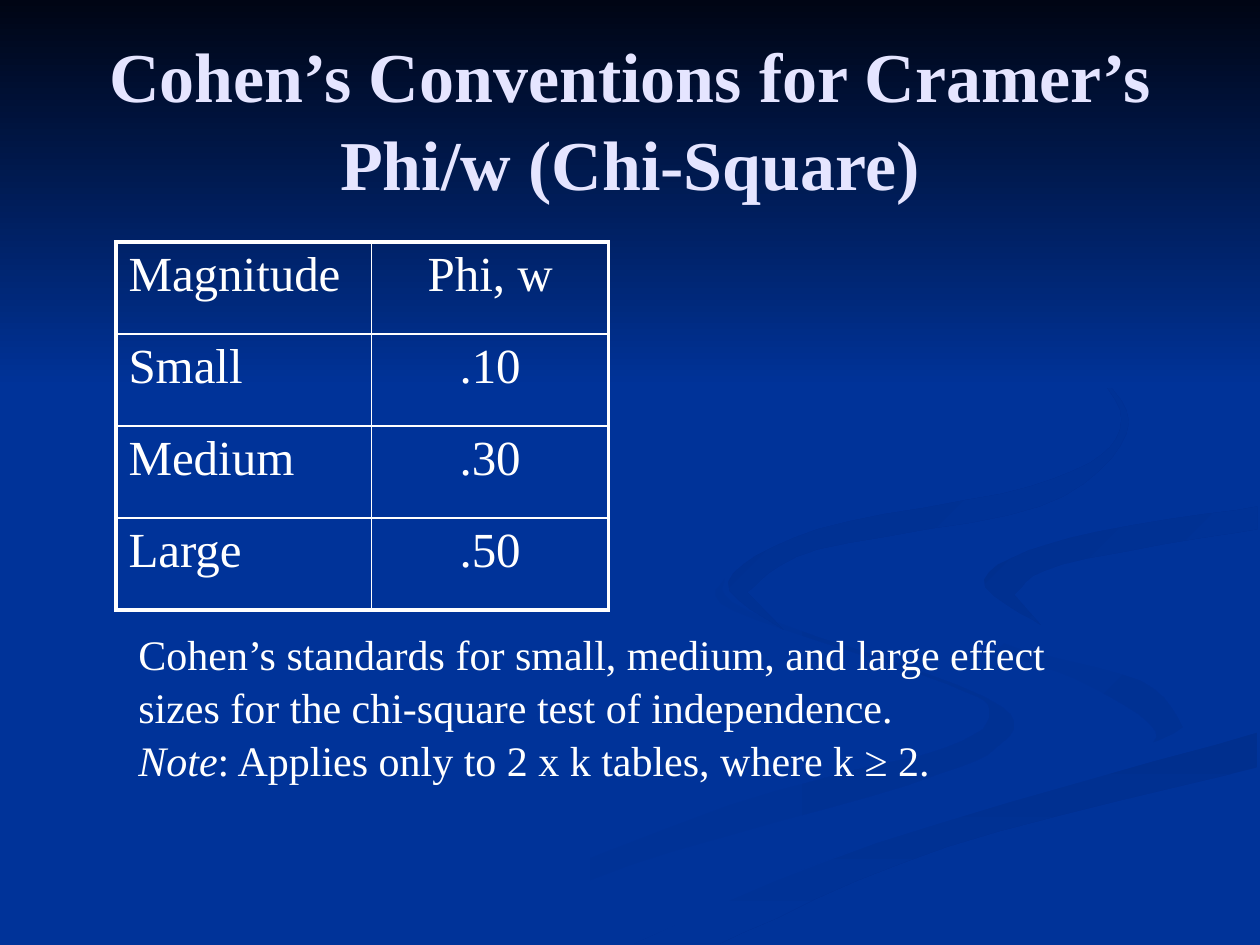
import pptx
import pptx.util
import pptx.dml.color
import pptx.enum.text
import pptx.oxml
import pptx.oxml.ns

WIDTH, HEIGHT = pptx.util.Inches(10), pptx.util.Inches(7.5)
HUNDREDTH = pptx.util.Inches(0.01)
FONT = "Times New Roman"
COLORS = {"blue": "003399", "night": "000514", "shade": "002F8E",
          "faint": "003193", "title": "E5E5FF", "white": "FFFFFF"}
CENTER = pptx.enum.text.PP_ALIGN.CENTER
LEFT = pptx.enum.text.PP_ALIGN.LEFT
ROWS = [("Magnitude", "Phi, w"), ("Small", ".10"), ("Medium", ".30"), ("Large", ".50")]
COLUMN_WIDTHS = (2.03, 1.88)
ROW_HEIGHT = 0.73
CURVE_STEPS = 6

# Ribbons: start color, end color, angle, curved edges in hundredths of an inch
RIBBONS = [
    ("blue", "faint", 0, [
        [(575, 459), (583, 485), (752, 543), (785, 566), (749, 594), (579, 639), (300, 749)],
        [(361, 749), (499, 687), (721, 623), (797, 588), (781, 553), (594, 485), (575, 459)]]),
    ("blue", "faint", 45, [
        [(724, 464), (755, 505), (854, 539), (917, 580), (894, 605)],
        [(941, 581), (905, 540), (792, 509), (724, 464)]]),
    ("shade", "blue", 90, [
        [(503, 749), (630, 693), (764, 647), (998, 581)],
        [(998, 609), (752, 672), (571, 749)]]),
    ("blue", "blue", 0, [
        [(999, 387), (808, 417), (725, 464), (793, 509), (905, 540), (942, 575),
         (812, 625), (477, 749)],
        [(503, 749), (696, 669), (999, 581)],
        [(999, 538), (848, 503), (781, 463), (865, 424), (999, 402)]]),
    ("shade", "blue", 45, [
        [(998, 402), (849, 427), (781, 460), (826, 496)],
        [(805, 472), (843, 448), (998, 420)]]),
    ("shade", "blue", 45, [
        [(762, 233), (870, 299), (886, 348), (818, 386), (649, 420), (578, 462), (622, 500)],
        [(593, 470), (649, 436), (825, 402), (894, 344), (864, 291), (762, 233)]]),
]


def rgb(name):
    return pptx.dml.color.RGBColor.from_string(COLORS[name])


def smooth_edge(points):
    """Points along a Catmull-Rom curve through the given points."""
    padded = [points[0], *points, points[-1]]
    curve = []
    for a, b, c, d in zip(padded, padded[1:], padded[2:], padded[3:]):
        for step in range(CURVE_STEPS):
            t = step / CURVE_STEPS
            curve.append(tuple(
                round(q + t / 2 * (r - p + t * (2 * p - 5 * q + 4 * r - s
                                                + t * (3 * q - p - 3 * r + s))))
                for p, q, r, s in zip(a, b, c, d)))
    return curve + [points[-1]]


def fill_gradient(shape, start, end, angle):
    shape.shadow.inherit = False
    shape.line.fill.background()
    shape.fill.gradient()
    shape.fill.gradient_angle = (360 - angle) % 360
    for stop, name in zip(shape.fill.gradient_stops, (start, end)):
        stop.color.rgb = rgb(name)


def add_ribbon(slide, start, end, angle, edges):
    outline = [point for edge in edges for point in smooth_edge(edge)]
    builder = slide.shapes.build_freeform(*outline[0], scale=HUNDREDTH)
    builder.add_line_segments(outline[1:], close=True)
    fill_gradient(builder.convert_to_shape(), start, end, angle)


def add_top_band(slide):
    band = slide.shapes.add_shape(1, 0, 0, WIDTH, pptx.util.Inches(3.08))
    fill_gradient(band, "night", "blue", 90)


def write_run(paragraph, text, color="white", **formats):
    run = paragraph.add_run()
    run.text = text
    run.font.color.rgb = rgb(color)
    for name, value in {"name": FONT, **formats}.items():
        setattr(run.font, name, value)


def place(shape, left, top, width, height):
    """Position a shape by shares of the slide's size."""
    values = {"left": left * WIDTH, "top": top * HEIGHT,
              "width": width * WIDTH, "height": height * HEIGHT}
    for name, value in values.items():
        setattr(shape, name, int(value))


def add_title(slide, text):
    title = slide.shapes.title
    slide.shapes._spTree.append(title._element)  # in front of the ribbons
    place(title, 0.05, 0.04, 0.9, 1 / 6)
    title.text_frame.vertical_anchor = pptx.enum.text.MSO_ANCHOR.MIDDLE
    paragraph = title.text_frame.paragraphs[0]
    paragraph.alignment = CENTER
    paragraph.line_spacing = 1.05
    write_run(paragraph, text, "title", size=pptx.util.Pt(40), bold=True)


def set_borders(cell, widths):
    properties = cell._tc.get_or_add_tcPr()
    for index, (side, width) in enumerate(widths.items()):
        properties.insert(index, pptx.oxml.parse_xml(
            f'<a:ln{side} {pptx.oxml.ns.nsdecls("a")} w="{pptx.util.Pt(width)}">'
            f'<a:solidFill><a:srgbClr val="{COLORS["white"]}"/></a:solidFill></a:ln{side}>'))


def add_effect_table(slide):
    inches = pptx.util.Inches
    last_row, last_column = len(ROWS) - 1, len(COLUMN_WIDTHS) - 1
    table = slide.shapes.add_table(
        len(ROWS), len(COLUMN_WIDTHS), inches(0.92), inches(1.92),
        inches(sum(COLUMN_WIDTHS)), inches(ROW_HEIGHT * len(ROWS))).table
    table.first_row = table.horz_banding = False
    for column, width in zip(table.columns, COLUMN_WIDTHS):
        column.width = inches(width)
    for i, row in enumerate(ROWS):
        table.rows[i].height = inches(ROW_HEIGHT)
        for j, text in enumerate(row):
            cell = table.cell(i, j)
            cell.fill.background()
            paragraph = cell.text_frame.paragraphs[0]
            paragraph.alignment = CENTER if j else LEFT
            write_run(paragraph, text, size=pptx.util.Pt(28))
            # Thick outer frame, thin inner lines
            outer = {"L": j == 0, "R": j == last_column, "T": i == 0, "B": i == last_row}
            set_borders(cell, {side: 2.25 if edge else 1 for side, edge in outer.items()})


def add_note(slide, paragraphs):
    box = slide.shapes.add_textbox(0, 0, 0, 0)
    place(box, 0.1, 0.656, 0.792, 0.173)
    frame = box.text_frame
    frame.word_wrap = True
    for index, runs in enumerate(paragraphs):
        paragraph = frame.add_paragraph() if index else frame.paragraphs[0]
        paragraph.line_spacing = 1.05
        for text, italic in runs:
            write_run(paragraph, text, size=pptx.util.Pt(24), italic=italic)


def main():
    presentation = pptx.Presentation()
    presentation.slide_width, presentation.slide_height = WIDTH, HEIGHT
    slide = presentation.slides.add_slide(presentation.slide_layouts[5])
    # Background
    slide.background.fill.solid()
    slide.background.fill.fore_color.rgb = rgb("blue")
    for ribbon in RIBBONS:
        add_ribbon(slide, *ribbon)
    add_top_band(slide)
    # Content
    add_title(slide, "Cohen’s Conventions for Cramer’s Phi/w (Chi-Square)")
    add_effect_table(slide)
    add_note(slide, [
        [("Cohen’s standards for small, medium, and large effect sizes "
          "for the chi-square test of independence.", False)],
        [("Note", True), (": Applies only to 2 x k tables, where k ≥ 2.", False)]])
    presentation.save("out.pptx")


if __name__ == "__main__":
    main()
